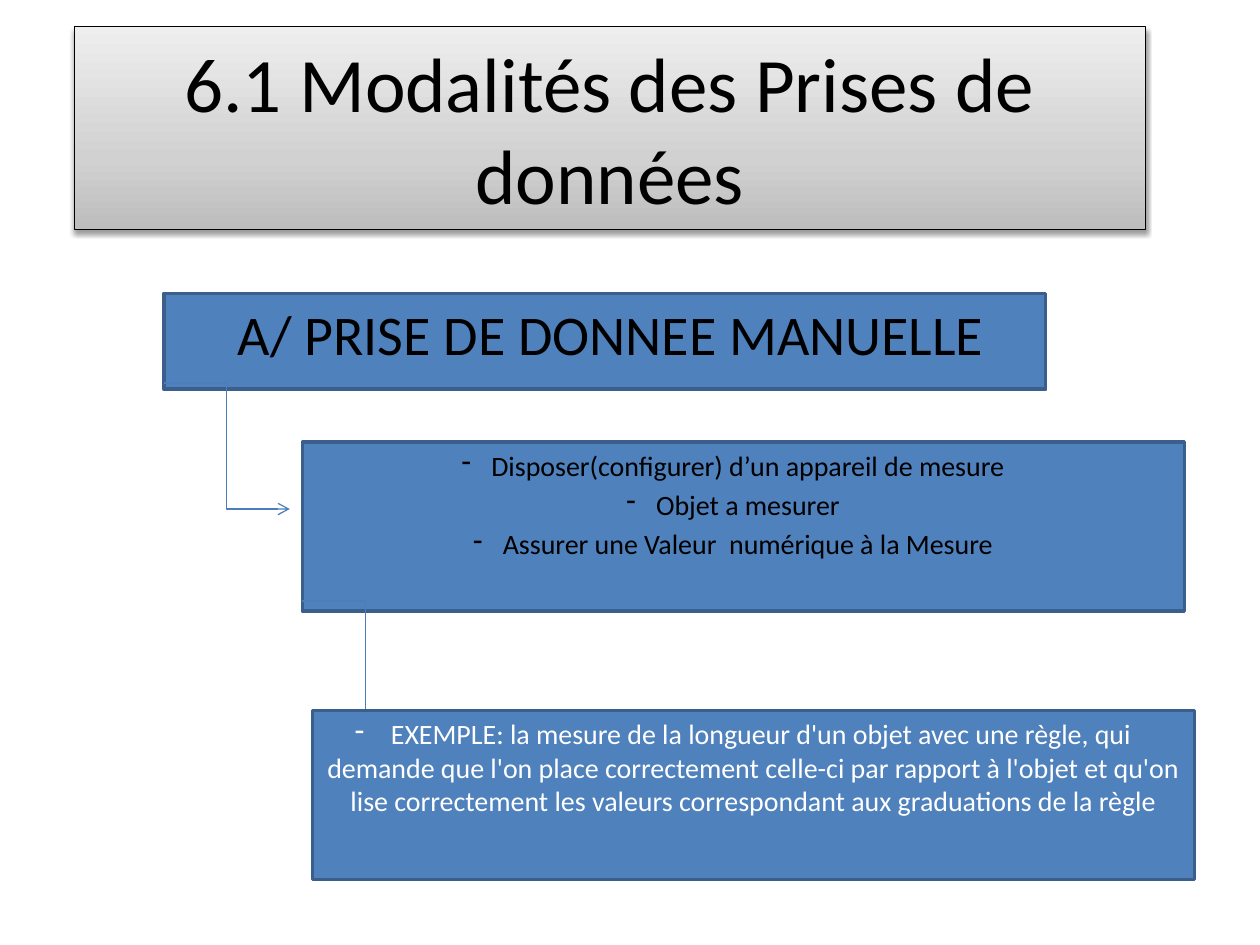
from dataclasses import dataclass

from lxml import etree
from pptx import Presentation
from pptx import util as u
from pptx.dml import color
from pptx.enum import shapes, text
from pptx.oxml import ns


@dataclass(frozen=True)
class Theme:
    font: str = "Calibri"
    black: str = "000000"
    white: str = "FFFFFF"
    blue: str = "4F81BD"
    border: str = "3A5F8C"
    arrow: str = "4B7EBC"
    greys: tuple = ((0, "BDBDBD"), (35, "D1D1D1"), (100, "EEEEEE"))
    title: int = 44
    heading: int = 32
    body: int = 16


THEME = Theme()


def rgb(value):
    return color.RGBColor.from_string(value)


def add(parent, tag, **attrs):
    return etree.SubElement(parent, ns.qn(tag), {k: str(v) for k, v in attrs.items()})


def add_color(parent, value):
    return add(parent, "a:srgbClr", val=value)


def add_box(s, box, line, width):
    sp = s.shapes.add_shape(shapes.MSO_SHAPE.RECTANGLE, *map(u.Inches, box))
    sp.shadow.inherit = False
    sp.line.color.rgb = rgb(line)
    sp.line.width = u.Pt(width)
    return sp


def write(sp, lines, size, ink, anchor, before=0, bullet=None):
    tf = sp.text_frame
    tf.word_wrap = True
    tf.vertical_anchor = anchor
    for i, line in enumerate(lines):
        p = tf.add_paragraph() if i else tf.paragraphs[0]
        p.alignment = text.PP_ALIGN.CENTER
        p.space_before = u.Pt(size * before)
        if bullet:
            add(p._p.get_or_add_pPr(), "a:buChar", char=bullet)
        r = p.add_run()
        r.text = line
        r.font.name = THEME.font
        r.font.size = u.Pt(size)
        r.font.color.rgb = rgb(ink)


def add_title(s, box, title):
    sp = add_box(s, box, THEME.black, 0.75)
    sp.fill.gradient()
    sp.fill.gradient_angle = 90
    stops = sp._element.spPr.find(".//" + ns.qn("a:gsLst"))
    for stop in list(stops):
        stops.remove(stop)
    for pos, grey in THEME.greys:
        add_color(add(stops, "a:gs", pos=pos * 1000), grey)
    effects = sp._element.spPr.find(ns.qn("a:effectLst"))
    shadow = add(effects, "a:outerShdw", blurRad=u.Pt(3.1), dist=u.Pt(1.6),
                 dir=90 * 60000, rotWithShape=0)
    add(add_color(shadow, THEME.black), "a:alpha", val=38000)
    write(sp, [title], THEME.title, THEME.black, text.MSO_ANCHOR.MIDDLE)


def add_step(s, box, lines, size, ink, bullet=None):
    sp = add_box(s, box, THEME.border, 2)
    sp.fill.solid()
    sp.fill.fore_color.rgb = rgb(THEME.blue)
    write(sp, lines, size, ink, text.MSO_ANCHOR.TOP, 0.2, bullet)


def add_arrow(s, left, top, side=1):
    ends = map(u.Inches, (left, top, left + side, top + side))
    c = s.shapes.add_connector(shapes.MSO_CONNECTOR.ELBOW, *ends)
    c.line.color.rgb = rgb(THEME.arrow)
    c.line.width = u.Pt(0.75)
    add(c.line._get_or_add_ln(), "a:tailEnd", type="arrow")
    add(c._element.spPr, "a:effectLst")


def main():
    prs = Presentation()
    prs.slide_width, prs.slide_height = u.Inches(10), u.Inches(7.5)
    s = prs.slides.add_slide(prs.slide_layouts[6])
    add_title(s, (0.59, 0.21, 8.5, 1.61), "6.1 Modalités des Prises de données")
    add_step(s, (1.3, 2.33, 7, 0.76), [" A/ PRISE DE DONNEE MANUELLE"],
             THEME.heading, THEME.black)
    add_arrow(s, 1.3, 3.04)
    add_step(s, (2.4, 3.51, 7, 1.34), [
        "Disposer(configurer) d’un appareil de mesure",
        "Objet a mesurer",
        "Assurer une Valeur  numérique à la Mesure",
    ], THEME.body, THEME.black, "-")
    add_arrow(s, 2.4, 4.77)
    add_step(s, (2.48, 5.64, 7, 1.34), [
        " EXEMPLE: la mesure de la longueur d'un objet avec une règle, qui "
        "demande que l'on place correctement celle-ci par rapport à l'objet "
        "et qu'on lise correctement les valeurs correspondant aux graduations "
        "de la règle",
    ], THEME.body, THEME.white, "-")
    prs.save("out.pptx")


if __name__ == "__main__":
    main()
